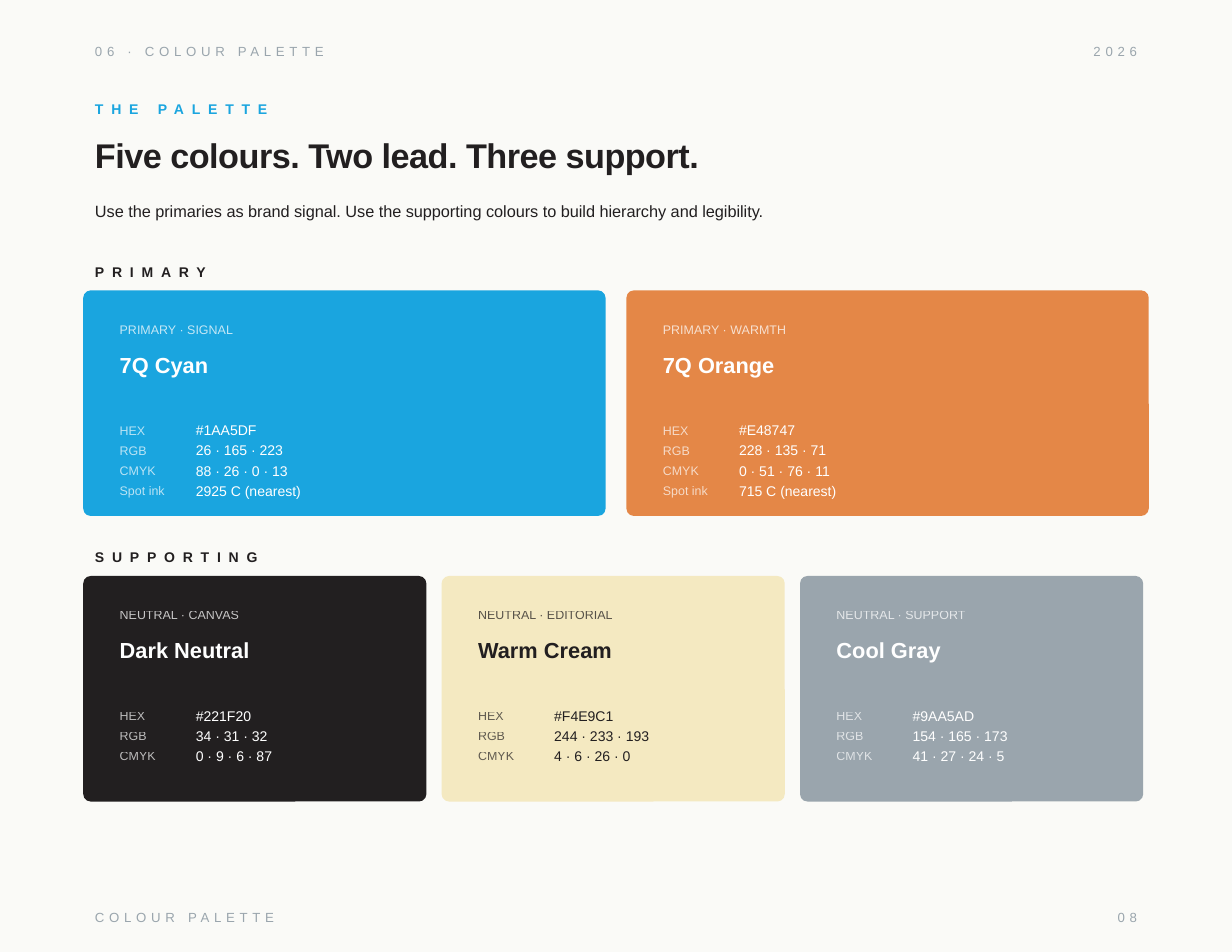
from dataclasses import dataclass

from lxml import etree
from pptx import Presentation
from pptx.dml.color import RGBColor
from pptx.enum import shapes, text
from pptx.oxml import ns
from pptx.util import Inches, Pt

FONT = "Arial"
COLORS = {
    "paper": "FAFAF7",
    "white": "FFFFFF",
    "cyan": "1AA5DF",
    "orange": "E48747",
    "dark": "221F20",
    "cream": "F4E9C1",
    "gray": "9AA5AD",
}
MARGIN = 0.75
CARD_HEIGHT = 2
ROW_HEIGHT = 0.18


@dataclass
class Swatch:
    role: str
    name: str
    color: str
    cmyk: str
    spot: str = ""
    ink: str = "white"

    def values(self) -> list[tuple[str, str]]:
        """Return the label and value of each colour system on the card."""
        code = COLORS[self.color]
        rows = [
            ("HEX", f"#{code}"),
            ("RGB", " · ".join(str(c) for c in RGBColor.from_string(code))),
            ("CMYK", self.cmyk),
        ]
        return rows + [("Spot ink", self.spot)] if self.spot else rows


@dataclass
class Group:
    title: str
    top: float
    card_width: float
    gap: float
    swatches: list[Swatch]


GROUPS = [
    Group("PRIMARY", 2.3, 4.65, 0.2, [
        Swatch("PRIMARY · SIGNAL", "7Q Cyan", "cyan", "88 · 26 · 0 · 13", "2925 C (nearest)"),
        Swatch("PRIMARY · WARMTH", "7Q Orange", "orange", "0 · 51 · 76 · 11", "715 C (nearest)"),
    ]),
    Group("SUPPORTING", 4.85, 3.05, 0.15, [
        Swatch("NEUTRAL · CANVAS", "Dark Neutral", "dark", "0 · 9 · 6 · 87"),
        Swatch("NEUTRAL · EDITORIAL", "Warm Cream", "cream", "4 · 6 · 26 · 0", ink="dark"),
        Swatch("NEUTRAL · SUPPORT", "Cool Gray", "gray", "41 · 27 · 24 · 5"),
    ]),
]


def rgb(name: str) -> RGBColor:
    return RGBColor.from_string(COLORS[name])


def add_text(s, content: str, x: float, y: float, w: float, h: float, *, size: float,
             color: str = "dark", bold: bool = False, spacing: float = 0, opacity: int = 100,
             right: bool = False, middle: bool = True, after: float = 0) -> None:
    """Add a one-line text box; spacing is in points and opacity in percent."""
    tf = s.shapes.add_textbox(Inches(x), Inches(y), Inches(w), Inches(h)).text_frame
    tf.word_wrap = True
    tf.vertical_anchor = text.MSO_ANCHOR.MIDDLE if middle else text.MSO_ANCHOR.TOP
    p = tf.paragraphs[0]
    if right:
        p.alignment = text.PP_ALIGN.RIGHT
    if after:
        p.space_after = Pt(after)
    r = p.add_run()
    r.text = content
    r.font.name, r.font.size, r.font.bold = FONT, Pt(size), bold
    r.font.color.rgb = rgb(color)
    r_pr = r.font._element
    if spacing:
        r_pr.set("spc", str(round(spacing * 100)))
    if opacity < 100:
        clr = r_pr.find(".//" + ns.qn("a:srgbClr"))
        etree.SubElement(clr, ns.qn("a:alpha")).set("val", str(opacity * 1000))


def add_running_line(s, y: float, left: str, right: str) -> None:
    style = dict(size=8.5, color="gray", spacing=3)
    add_text(s, left, MARGIN, y, 6, 0.28, **style)
    add_text(s, right, 6.5, y, 3.75, 0.28, right=True, **style)


def add_card(s, swatch: Swatch, x: float, y: float, w: float) -> None:
    sp = s.shapes.add_shape(shapes.MSO_SHAPE.ROUNDED_RECTANGLE,
                            Inches(x), Inches(y), Inches(w), Inches(CARD_HEIGHT))
    sp.adjustments[0] = 0.03
    sp.shadow.inherit = False
    sp.fill.solid()
    sp.fill.fore_color.rgb = sp.line.color.rgb = rgb(swatch.color)
    sp.line.width = Pt(1)

    left, ink = x + 0.22, swatch.ink
    add_text(s, swatch.role, left, y + 0.2, w - 0.4, 0.28, size=8, color=ink, opacity=75)
    add_text(s, swatch.name, left, y + 0.48, w - 0.4, 0.35, size=14, color=ink, bold=True)
    for i, (label, value) in enumerate(swatch.values()):
        row = y + 1.15 + i * ROW_HEIGHT
        add_text(s, label, left, row, 0.7, ROW_HEIGHT, size=8, color=ink, opacity=70)
        add_text(s, value, x + 0.9, row, w - 1.1, ROW_HEIGHT, size=9, color=ink)


def add_group(s, group: Group) -> None:
    add_text(s, group.title, MARGIN, group.top, 5, 0.25, size=9, bold=True, spacing=5)
    for i, swatch in enumerate(group.swatches):
        x = MARGIN + i * (group.card_width + group.gap)
        add_card(s, swatch, x, group.top + 0.3, group.card_width)


def main() -> None:
    prs = Presentation()
    prs.slide_width, prs.slide_height = Inches(11), Inches(8.5)
    s = prs.slides.add_slide(prs.slide_layouts[6])
    s.background.fill.solid()
    s.background.fill.fore_color.rgb = rgb("paper")

    add_running_line(s, 0.32, "06 · COLOUR PALETTE", "2026")
    add_text(s, "THE PALETTE", MARGIN, 0.85, 6, 0.25, size=9, color="cyan", bold=True, spacing=5)
    add_text(s, "Five colours. Two lead. Three support.", MARGIN, 1.15, 9.5, 0.55,
             size=22, bold=True, spacing=-0.3, middle=False)
    add_text(s, "Use the primaries as brand signal. Use the supporting colours to build "
             "hierarchy and legibility.", MARGIN, 1.75, 9.5, 0.35,
             size=10.5, middle=False, after=6)
    for group in GROUPS:
        add_group(s, group)
    add_running_line(s, 8.05, "COLOUR PALETTE", "08")
    prs.save("out.pptx")


if __name__ == "__main__":
    main()
